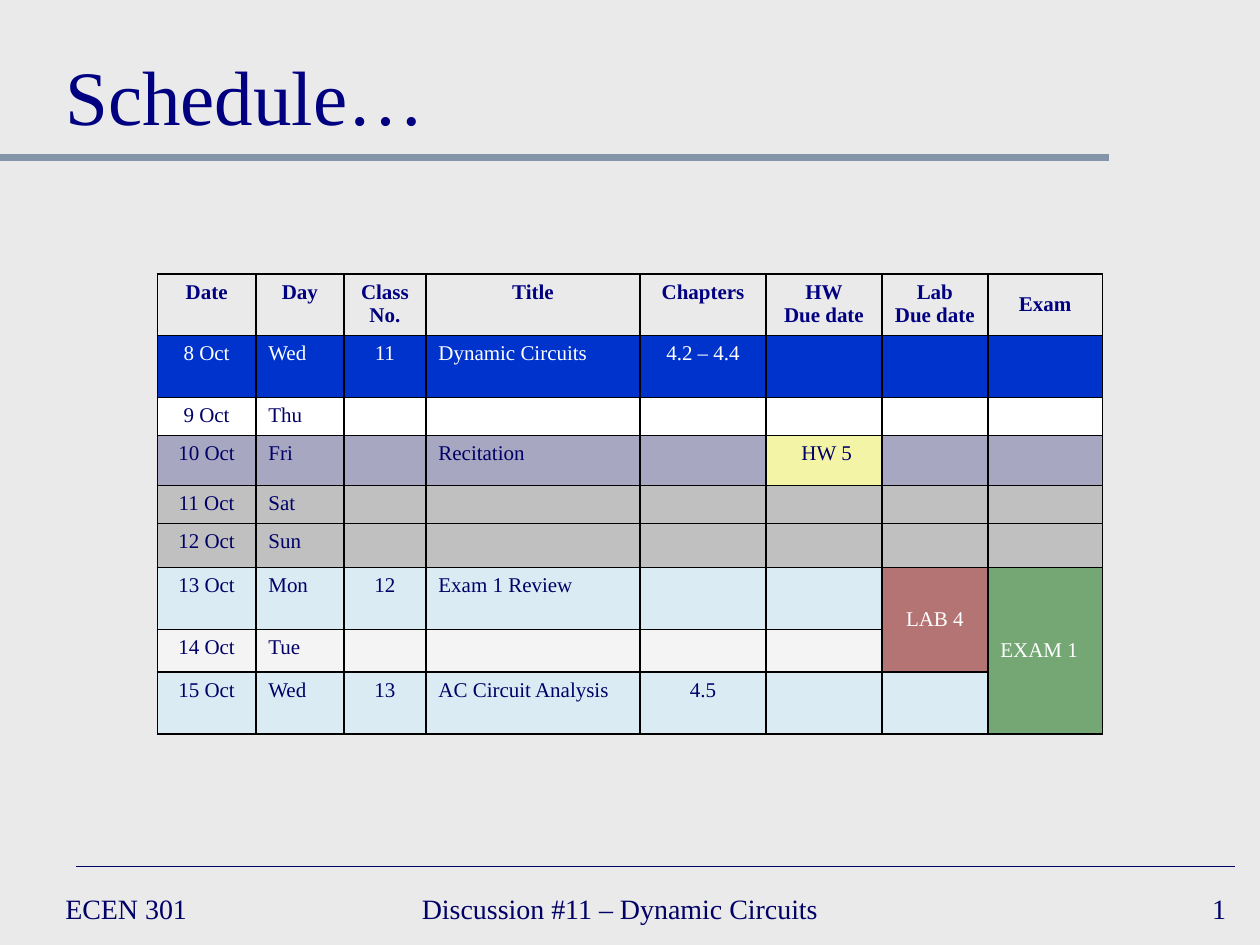
"""Build the course schedule slide."""
from dataclasses import dataclass

import pptx
import pptx.dml.color
import pptx.enum.shapes
import pptx.enum.text
import pptx.oxml
import pptx.oxml.ns
import pptx.shapes.connector
import pptx.slide
import pptx.table
import pptx.util

RGBColor = pptx.dml.color.RGBColor
Align = pptx.enum.text.PP_ALIGN
Anchor = pptx.enum.text.MSO_ANCHOR

NAVY = RGBColor(0x00, 0x00, 0x80)
INK = RGBColor(0x00, 0x00, 0x66)
WHITE = RGBColor(0xFF, 0xFF, 0xFF)
BLACK = RGBColor(0x00, 0x00, 0x00)
PAPER = RGBColor(0xEA, 0xEA, 0xEA)
STEEL = RGBColor(0x84, 0x95, 0xA9)
BLUE = RGBColor(0x00, 0x33, 0xCC)
VIOLET = RGBColor(0x66, 0x66, 0x99)
GRAY = RGBColor(0xC0, 0xC0, 0xC0)
SKY = RGBColor(0xCC, 0xEC, 0xFF)
YELLOW = RGBColor(0xFF, 0xFF, 0x66)
MAROON = RGBColor(0x80, 0x00, 0x00)
GREEN = RGBColor(0x00, 0x66, 0x00)

FONT = "Times New Roman"
WIDTH = pptx.util.Inches(10)
HEIGHT = pptx.util.Inches(7.5)
COLUMNS = (0.78, 0.7, 0.65, 1.7, 1, 0.92, 0.84, 0.91)
LEFT_COLUMNS = (1, 3, 7)
HEADER = ("Date", "Day", "Class\nNo.", "Title", "Chapters",
          "HW\nDue date", "Lab\nDue date", "Exam")


@dataclass(frozen=True)
class Rule:
    """Horizontal line, placed in shares of the slide."""
    start: float
    end: float
    y: float
    color: RGBColor
    weight: float


@dataclass(frozen=True)
class Label:
    """Text box, placed in shares of the slide."""
    text: str
    left: float
    top: float
    width: float
    height: float
    size: int = 16
    color: RGBColor = INK
    align: Align = Align.LEFT
    anchor: Anchor = Anchor.MIDDLE
    wrap: bool = False


@dataclass(frozen=True)
class Row:
    """Table row: height in inches, leading texts and shared look."""
    height: float
    texts: tuple[str, ...]
    fill: RGBColor | None
    opacity: int = 100
    color: RGBColor = INK
    bold: bool = False


@dataclass(frozen=True)
class Highlight:
    """Cell, or run of merged rows, with its own look."""
    row: int
    column: int
    span: int
    text: str
    fill: RGBColor
    color: RGBColor
    anchor: Anchor = Anchor.TOP


RULES = (Rule(0, 0.88, 1 / 6, STEEL, 4), Rule(0.06, 0.98, 0.917, INK, 1))
FOOTER_TOP, FOOTER_HEIGHT = 7 / 7.5, 0.42 / 7.5
LABELS = (
    Label("ECEN 301", 0.042, FOOTER_TOP, 0.217, FOOTER_HEIGHT),
    Label("Discussion #11 – Dynamic Circuits", 0.325, FOOTER_TOP, 0.383, FOOTER_HEIGHT),
    Label("1", 0.775, FOOTER_TOP, 0.208, FOOTER_HEIGHT, align=Align.RIGHT),
    Label("Schedule…", 0.042, 0.17 / 7.5, 0.925, 1 / 7.5, 44, NAVY,
          anchor=Anchor.BOTTOM, wrap=True),
)
ROWS = (
    Row(0.49, HEADER, None, color=NAVY, bold=True),
    Row(0.49, ("8 Oct", "Wed", "11", "Dynamic Circuits", "4.2 – 4.4"), BLUE, color=WHITE),
    Row(0.3, ("9 Oct", "Thu"), WHITE),
    Row(0.4, ("10 Oct", "Fri", "", "Recitation"), VIOLET, 50),
    Row(0.3, ("11 Oct", "Sat"), GRAY),
    Row(0.35, ("12 Oct", "Sun"), GRAY),
    Row(0.49, ("13 Oct", "Mon", "12", "Exam 1 Review"), SKY, 50),
    Row(0.34, ("14 Oct", "Tue"), WHITE, 50),
    Row(0.49, ("15 Oct", "Wed", "13", "AC Circuit Analysis", "4.5"), SKY, 50),
)
HIGHLIGHTS = (
    Highlight(3, 5, 1, " HW 5", YELLOW, INK),
    Highlight(6, 6, 2, "LAB 4", MAROON, WHITE, Anchor.MIDDLE),
    Highlight(6, 7, 3, "EXAM 1", GREEN, WHITE, Anchor.MIDDLE),
)


def draw_rule(slide: pptx.slide.Slide, rule: Rule) -> None:
    """Draw one horizontal rule without a shadow."""
    y = int(rule.y * HEIGHT)
    connector = slide.shapes.add_connector(
        pptx.enum.shapes.MSO_CONNECTOR.STRAIGHT,
        int(rule.start * WIDTH), y, int(rule.end * WIDTH), y)
    connector.line.color.rgb = rule.color
    connector.line.width = pptx.util.Pt(rule.weight)
    properties = connector._element.spPr
    properties.append(properties.makeelement(pptx.oxml.ns.qn("a:effectLst"), {}))


def write(frame: pptx.text.text.TextFrame, text: str, size: int,
          color: RGBColor, align: Align, bold: bool = False) -> None:
    """Fill a text frame with evenly formatted paragraphs."""
    frame.text = text
    for paragraph in frame.paragraphs:
        paragraph.alignment = align
        paragraph.font.name = FONT
        paragraph.font.size = pptx.util.Pt(size)
        paragraph.font.color.rgb = color
        paragraph.font.bold = bold


def draw_label(slide: pptx.slide.Slide, label: Label) -> None:
    """Draw one text box."""
    shape = slide.shapes.add_textbox(
        int(label.left * WIDTH), int(label.top * HEIGHT),
        int(label.width * WIDTH), int(label.height * HEIGHT))
    shape.text_frame.word_wrap = label.wrap
    shape.text_frame.vertical_anchor = label.anchor
    write(shape.text_frame, label.text, label.size, label.color, label.align)


def paint(cell: pptx.table._Cell, fill: RGBColor | None, opacity: int) -> None:
    """Set the fill of a cell and its opacity in percent."""
    if fill is None:
        cell.fill.background()
        return
    cell.fill.solid()
    cell.fill.fore_color.rgb = fill
    if opacity < 100:
        color = cell._tc.tcPr.find("/".join(map(pptx.oxml.ns.qn, ("a:solidFill", "a:srgbClr"))))
        alpha = color.makeelement(pptx.oxml.ns.qn("a:alpha"), {"val": str(opacity * 1000)})
        color.append(alpha)


def outline(cell: pptx.table._Cell) -> None:
    """Give a cell thin black borders on all sides."""
    properties = cell._tc.get_or_add_tcPr()
    for index, side in enumerate("LRTB"):
        properties.insert(index, pptx.oxml.parse_xml(
            f'<a:ln{side} {pptx.oxml.ns.nsdecls("a")} w="{pptx.util.Pt(1)}"><a:solidFill>'
            f'<a:srgbClr val="{BLACK}"/></a:solidFill></a:ln{side}>'))


def draw_schedule(slide: pptx.slide.Slide) -> None:
    """Draw the schedule table and its highlighted cells."""
    heights = [row.height for row in ROWS]
    table = slide.shapes.add_table(
        len(ROWS), len(COLUMNS), int(0.125 * WIDTH), int(0.29 * HEIGHT),
        pptx.util.Inches(sum(COLUMNS)), pptx.util.Inches(sum(heights))).table
    table.first_row = table.horz_banding = False
    for column, width in zip(table.columns, COLUMNS):
        column.width = pptx.util.Inches(width)
    for y, row in enumerate(ROWS):
        table.rows[y].height = pptx.util.Inches(row.height)
        for x in range(len(COLUMNS)):
            cell = table.cell(y, x)
            text = row.texts[x] if x < len(row.texts) else ""
            align = Align.LEFT if y and x in LEFT_COLUMNS else Align.CENTER
            write(cell.text_frame, text, 12, row.color, align, row.bold)
            paint(cell, row.fill, row.opacity)
            outline(cell)
    table.cell(0, len(COLUMNS) - 1).vertical_anchor = Anchor.MIDDLE
    for item in HIGHLIGHTS:
        cell = table.cell(item.row, item.column)
        if item.span > 1:
            cell.merge(table.cell(item.row + item.span - 1, item.column))
        align = Align.LEFT if item.column in LEFT_COLUMNS else Align.CENTER
        write(cell.text_frame, item.text, 12, item.color, align)
        cell.vertical_anchor = item.anchor
        for y in range(item.row, item.row + item.span):
            paint(table.cell(y, item.column), item.fill, 50)


def main() -> None:
    """Assemble and save the presentation."""
    presentation = pptx.Presentation()
    presentation.slide_width, presentation.slide_height = WIDTH, HEIGHT
    slide = presentation.slides.add_slide(presentation.slide_layouts[6])
    slide.background.fill.solid()
    slide.background.fill.fore_color.rgb = PAPER
    for rule in RULES:
        draw_rule(slide, rule)
    draw_schedule(slide)
    for label in LABELS:
        draw_label(slide, label)
    presentation.save("out.pptx")


if __name__ == "__main__":
    main()
